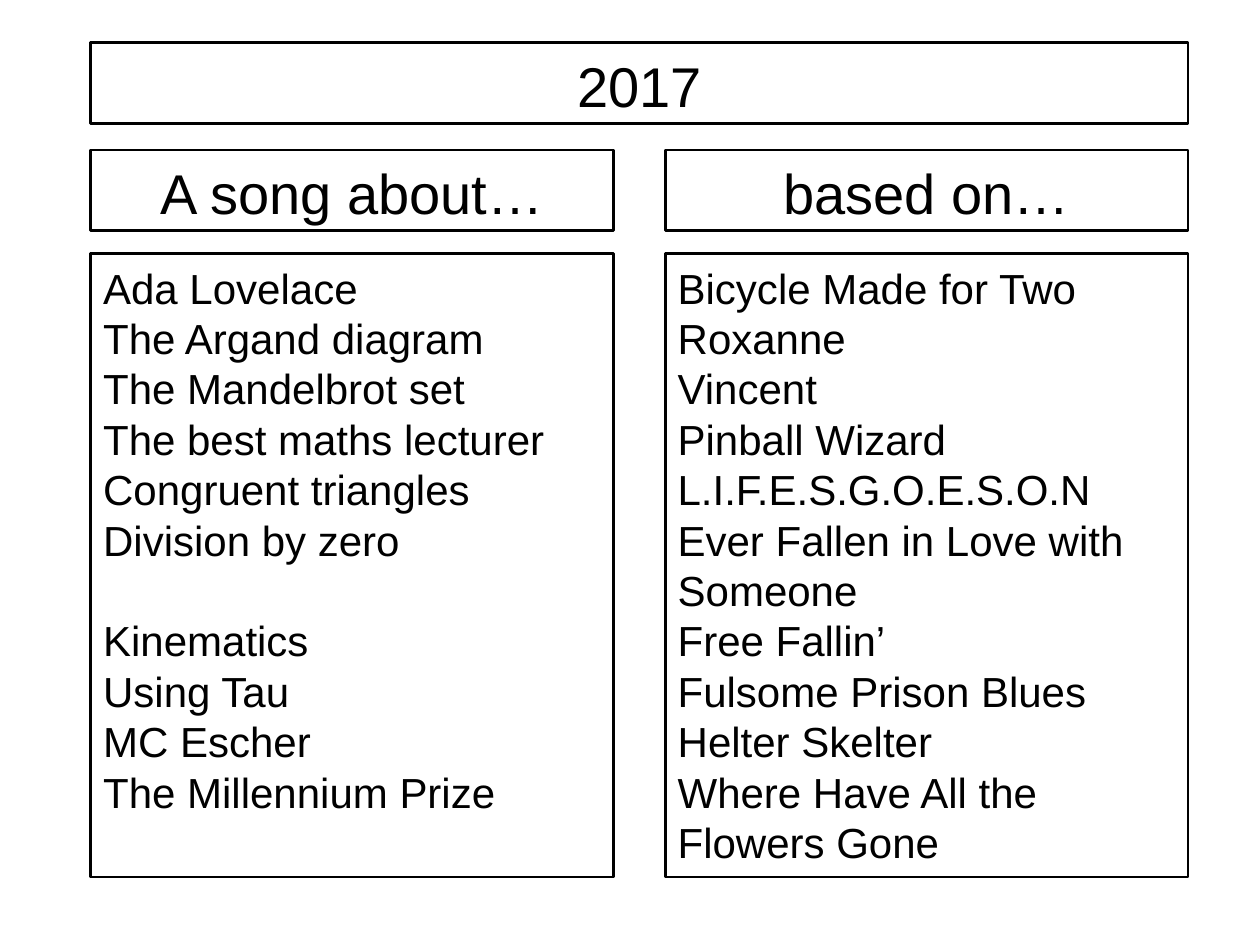
from pptx import Presentation
from pptx.dml.color import RGBColor
from pptx.enum.shapes import MSO_SHAPE
from pptx.enum.text import MSO_ANCHOR, PP_ALIGN
from pptx.util import Inches, Pt

COLORS = {"ink": "000000"}
LEFT, RIGHT, WIDE = 0.72, 5.28, 4.15
HEAD = 0.64
TOPICS = [
    "Ada Lovelace", "The Argand diagram", "The Mandelbrot set",
    "The best maths lecturer", "Congruent triangles", "Division by zero",
    "Kinematics", "Using Tau", "MC Escher", "The Millennium Prize",
]
TUNES = [
    "Bicycle Made for Two", "Roxanne", "Vincent", "Pinball Wizard",
    "L.I.F.E.S.G.O.E.S.O.N", "Ever Fallen in Love with Someone",
    "Free Fallin’", "Fulsome Prison Blues", "Helter Skelter",
    "Where Have All the Flowers Gone",
]


def write(para, text, size=24, align=PP_ALIGN.LEFT, font="Arial", color="ink", gap=0):
    para.alignment = align
    para.line_spacing = Pt(size * 1.2)
    para.space_before = Pt(gap)
    run = para.add_run()
    run.text = text
    run.font.size = Pt(size)
    run.font.name = font
    run.font.color.rgb = RGBColor.from_string(COLORS[color])


class Board:
    def __init__(self, slide, line=1.5):
        self.slide = slide
        self.line = line

    def box(self, left, top, width, height):
        shape = self.slide.shapes.add_shape(
            MSO_SHAPE.RECTANGLE, Inches(left), Inches(top), Inches(width), Inches(height))
        shape.shadow.inherit = False
        shape.fill.background()
        shape.line.color.rgb = RGBColor.from_string(COLORS["ink"])
        shape.line.width = Pt(self.line)
        frame = shape.text_frame
        frame.word_wrap = True
        frame.vertical_anchor = MSO_ANCHOR.TOP
        frame.margin_top = Inches(0.07)
        frame.margin_bottom = 0
        return frame

    def head(self, text, left, top, width):
        frame = self.box(left, top, width, HEAD)
        write(frame.paragraphs[0], text, size=32, align=PP_ALIGN.CENTER)

    def rows(self, items, left, top, height, gaps):
        frame = self.box(left, top, WIDE, height)
        for i, item in enumerate(items):
            para = frame.add_paragraph() if i else frame.paragraphs[0]
            write(para, item, gap=gaps.get(item, 0))


def main():
    deck = Presentation()
    deck.slide_width, deck.slide_height = Inches(10), Inches(7.5)
    board = Board(deck.slides.add_slide(deck.slide_layouts[6]))
    columns = [
        (LEFT, "A song about…", TOPICS, {"Kinematics": 28.8}),
        (RIGHT, "based on…", TUNES, {}),
    ]
    for left, title, items, gaps in columns:
        board.head(title, left, 1.19, WIDE)
        board.rows(items, left, 2.01, 4.95, gaps)
    board.head("2017", LEFT, 0.34, RIGHT + WIDE - LEFT)
    deck.save("out.pptx")


if __name__ == "__main__":
    main()
